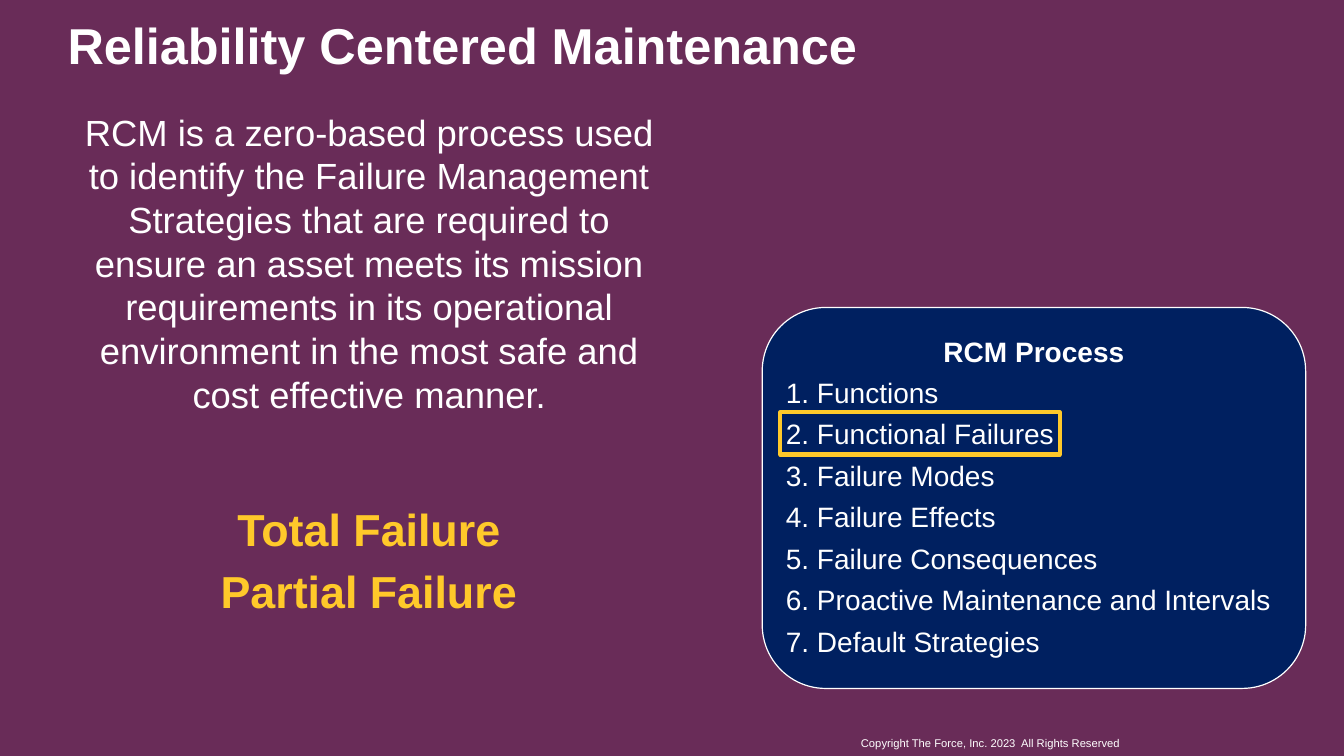
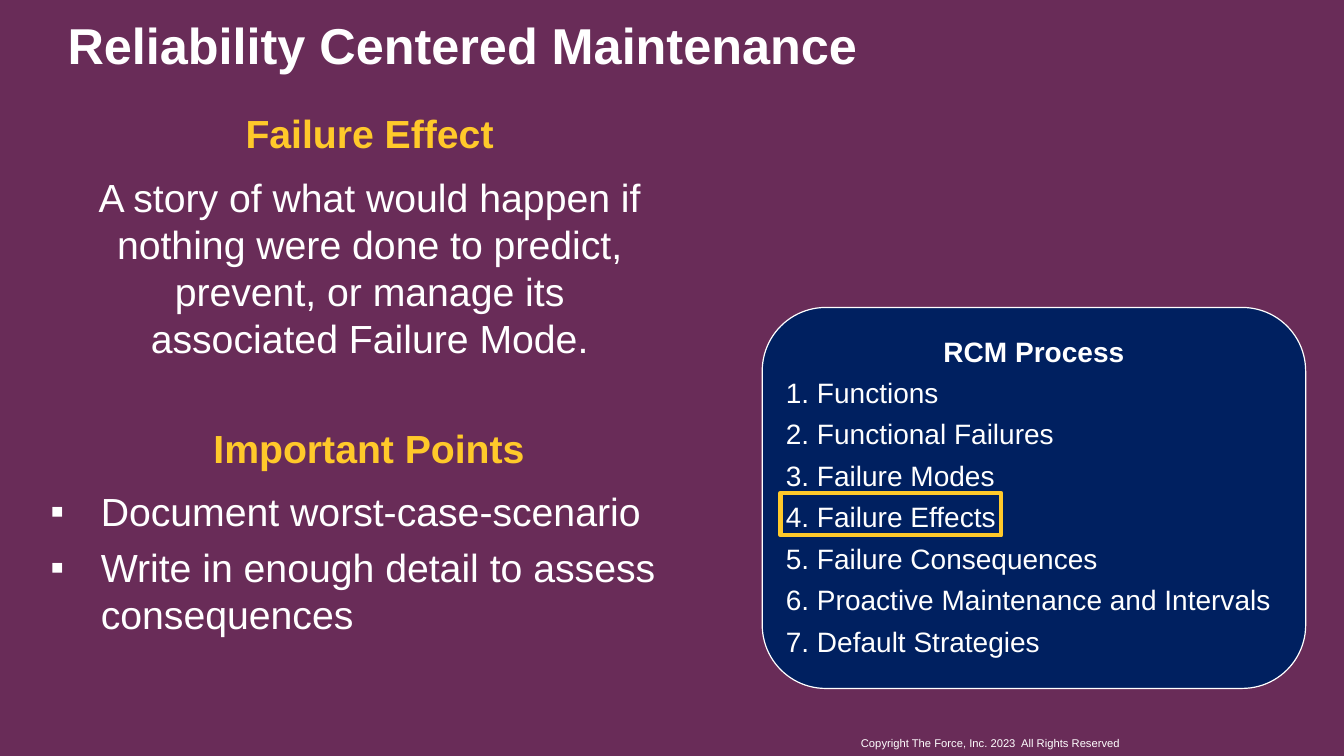
from dataclasses import dataclass

import pptx
import pptx.dml.color
import pptx.enum.shapes
import pptx.enum.text
import pptx.oxml
import pptx.oxml.ns
import pptx.util

Inches = pptx.util.Inches
Pt = pptx.util.Pt
ALIGN = pptx.enum.text.PP_ALIGN
ANCHOR = pptx.enum.text.MSO_ANCHOR
SHAPE = pptx.enum.shapes.MSO_SHAPE

FONT = "Arial"
PLUM, NAVY, GOLD, WHITE = "692C58", "002060", "FFC92A", "FFFFFF"
TITLE = "Reliability Centered Maintenance"
COPYRIGHT = "Copyright The Force, Inc. 2023  All Rights Reserved"
STEPS = [
    "Functions",
    "Functional Failures",
    "Failure Modes",
    "Failure Effects",
    "Failure Consequences",
    "Proactive Maintenance and Intervals",
    "Default Strategies",
]
STEP_TOP, STEP_PITCH = 3.29, 0.4


@dataclass
class Box:
    left: float
    top: float
    width: float
    height: float


@dataclass
class Line:
    text: str
    size: float
    color: str = WHITE
    bold: bool = False
    align: ALIGN = ALIGN.CENTER
    after: float = 0
    spacing: float = 1.0
    bullet: bool = False


@dataclass
class Block:
    box: Box
    lines: list[Line]


@dataclass
class Page:
    body: Block
    note: Block
    step: int
    mark_width: float


def rgb(color: str) -> pptx.dml.color.RGBColor:
    return pptx.dml.color.RGBColor.from_string(color)


def place(sp, box: Box) -> None:
    sp.left, sp.top = Inches(box.left), Inches(box.top)
    sp.width, sp.height = Inches(box.width), Inches(box.height)


def set_bullet(p, bullet: bool) -> None:
    indent = Inches(0.5) if bullet else 0
    pPr = p._p.get_or_add_pPr()
    pPr.set("marL", str(indent))
    pPr.set("indent", str(-indent))
    ns = pptx.oxml.ns.nsdecls("a")
    marks = [f'<a:buFont {ns} typeface="{FONT}"/>', f'<a:buChar {ns} char="▪"/>']
    for xml in marks if bullet else [f"<a:buNone {ns}/>"]:
        pPr.append(pptx.oxml.parse_xml(xml))


def write(tf, lines: list[Line], margins: tuple[float, float] = (0.1, 0.05),
          anchor: ANCHOR = ANCHOR.TOP) -> None:
    tf.word_wrap = True
    tf.auto_size = pptx.enum.text.MSO_AUTO_SIZE.NONE
    tf.vertical_anchor = anchor
    tf.margin_left = tf.margin_right = Inches(margins[0])
    tf.margin_top = tf.margin_bottom = Inches(margins[1])
    for i, line in enumerate(lines):
        p = tf.add_paragraph() if i else tf.paragraphs[0]
        set_bullet(p, line.bullet)
        p.alignment = line.align
        p.line_spacing = line.spacing
        p.space_before, p.space_after = Pt(0), Pt(line.after)
        r = p.add_run()
        r.text = line.text
        r.font.name, r.font.size, r.font.bold = FONT, Pt(line.size), line.bold
        r.font.color.rgb = rgb(line.color)


def add_text(s, block: Block):
    sp = s.shapes.add_textbox(0, 0, 0, 0)
    place(sp, block.box)
    write(sp.text_frame, block.lines)
    return sp


def add_shape(s, kind: SHAPE, box: Box, fill: str | None, line: str, weight: float):
    sp = s.shapes.add_shape(kind, 0, 0, 0, 0)
    place(sp, box)
    sp.shadow.inherit = False
    if fill:
        sp.fill.solid()
        sp.fill.fore_color.rgb = rgb(fill)
    else:
        sp.fill.background()
    sp.line.color.rgb = rgb(line)
    sp.line.width = Pt(weight)
    return sp


def add_process(s, step: int, mark_width: float) -> None:
    panel = add_shape(s, SHAPE.ROUNDED_RECTANGLE, Box(7.56, 3.05, 5.39, 3.78), NAVY, WHITE, 0.85)
    lines = [Line("RCM Process", 20, bold=True, after=8, spacing=0.9)]
    lines += [Line(f"{n}. {name}", 20, align=ALIGN.LEFT, after=8, spacing=0.9)
              for n, name in enumerate(STEPS, 1)]
    write(panel.text_frame, lines, (0.05, 0.05), ANCHOR.MIDDLE)
    top = STEP_TOP + STEP_PITCH * step
    add_shape(s, SHAPE.RECTANGLE, Box(7.74, top, mark_width, 0.42), None, GOLD, 3)


def add_page(prs, layout, page: Page):
    s = prs.slides.add_slide(layout)
    title, body = s.shapes.title, s.placeholders[1]
    place(title, Box(0.67, 0.18, 9.17, 0.56))
    write(title.text_frame, [Line(TITLE, 36, bold=True, align=ALIGN.LEFT)], (0, 0), ANCHOR.BOTTOM)
    place(body, page.body.box)
    write(body.text_frame, page.body.lines)
    add_text(s, page.note)
    add_process(s, page.step, page.mark_width)
    return s


def heading(text: str) -> Line:
    return Line(text, 28, GOLD, True, after=11.5)


def point(text: str) -> Line:
    return Line(text, 28, align=ALIGN.LEFT, after=6, bullet=True)


PAGES = [
    Page(
        Block(Box(0.67, 1.04, 5.99, 3.16), [
            Line("RCM is a zero-based process used to identify the Failure Management "
                 "Strategies that are required to ensure an asset meets its mission "
                 "requirements in its operational environment in the most safe and "
                 "cost effective manner.", 26),
        ]),
        Block(Box(1.19, 4.93, 4.94, 1.26), [
            Line(f"{kind} Failure", 32, GOLD, True, after=6) for kind in ("Total", "Partial")
        ]),
        step=2,
        mark_width=2.77,
    ),
    Page(
        Block(Box(0.4, 4.16, 6.52, 2.24), [
            heading("Important Points"),
            point("Document worst-case-scenario"),
            point("Write in enough detail to assess consequences"),
        ]),
        Block(Box(0.67, 1.04, 5.99, 2.66), [
            heading("Failure Effect"),
            Line("A story of what would happen if nothing were done to predict, "
                 "prevent, or manage its associated Failure Mode.", 28),
        ]),
        step=4,
        mark_width=2.19,
    ),
]


def main() -> None:
    prs = pptx.Presentation()
    prs.slide_width, prs.slide_height = Inches(13.33), Inches(7.5)
    fill = prs.slide_master.background.fill
    fill.solid()
    fill.fore_color.rgb = rgb(PLUM)
    layout = prs.slide_layouts[1]
    slides = [add_page(prs, layout, page) for page in PAGES]
    footer = add_text(slides[0], Block(Box(8.44, 7.26, 2.82, 0.24),
                                       [Line(COPYRIGHT, 8, align=ALIGN.LEFT)]))
    layout.shapes.element.append(footer.element)
    prs.save("out.pptx")


if __name__ == "__main__":
    main()
